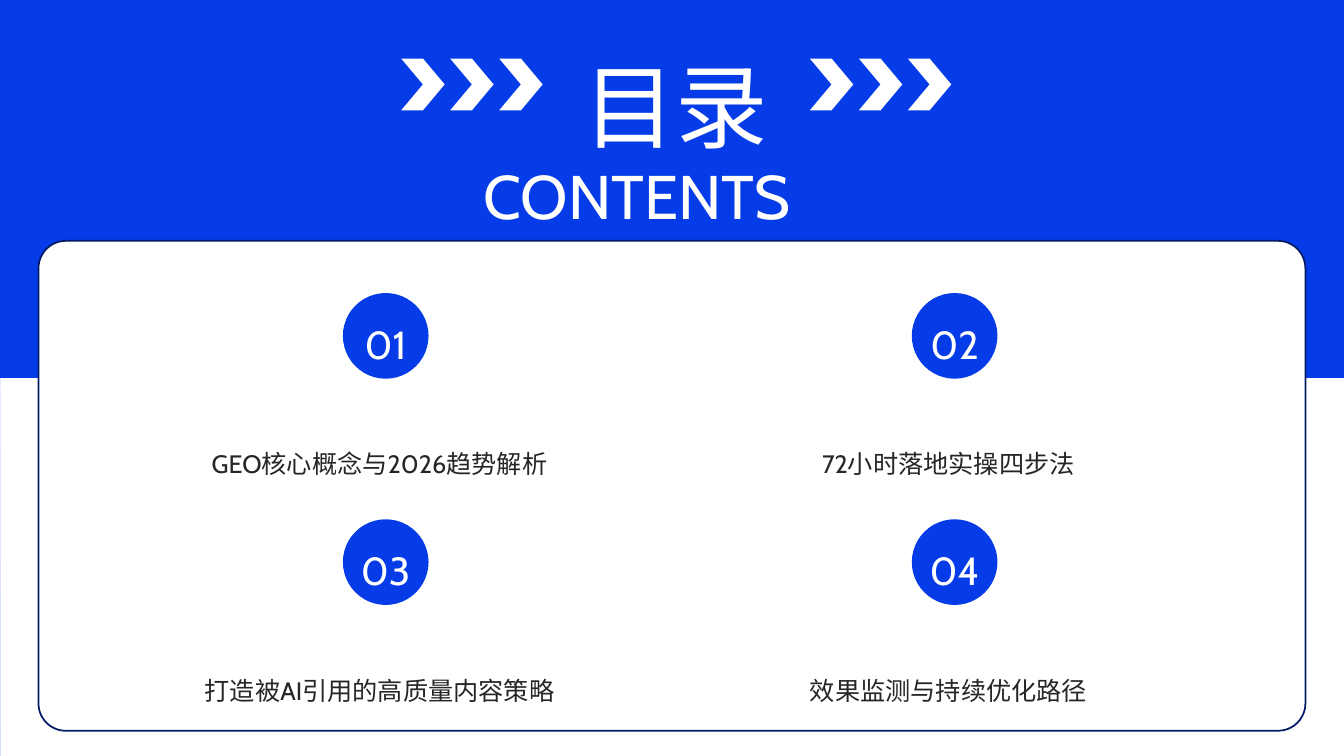
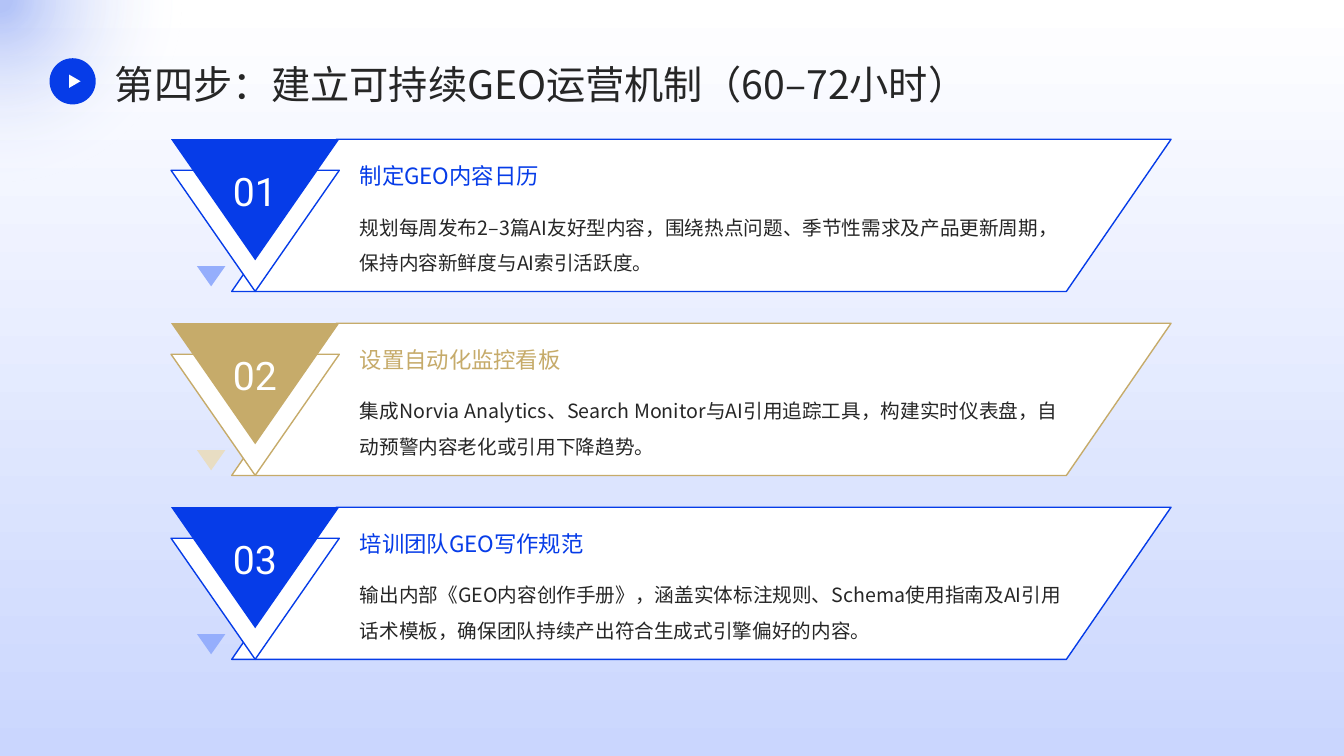
from lxml import etree
from pptx import Presentation
from pptx.dml.color import RGBColor
from pptx.enum.lang import MSO_LANGUAGE_ID
from pptx.enum.shapes import MSO_SHAPE
from pptx.enum.text import MSO_ANCHOR, PP_ALIGN
from pptx.oxml.ns import qn
from pptx.util import Pt

RECT, ROUND_RECT = MSO_SHAPE.RECTANGLE, MSO_SHAPE.ROUNDED_RECTANGLE
OVAL, CHEVRON = MSO_SHAPE.OVAL, MSO_SHAPE.CHEVRON
TRIANGLE, PARALLELOGRAM = MSO_SHAPE.ISOSCELES_TRIANGLE, MSO_SHAPE.PARALLELOGRAM
LEFT, CENTER = PP_ALIGN.LEFT, PP_ALIGN.CENTER
TOP, MIDDLE = MSO_ANCHOR.TOP, MSO_ANCHOR.MIDDLE
CHINESE = MSO_LANGUAGE_ID.SIMPLIFIED_CHINESE

BLUE = RGBColor(0x06, 0x3C, 0xE8)
NAVY = RGBColor(0x03, 0x1A, 0x66)
PALE_BLUE = RGBColor(0x95, 0xAE, 0xFC)
MIST = RGBColor(0xCA, 0xD6, 0xFE)
GOLD = RGBColor(0xC6, 0xAB, 0x6A)
PALE_GOLD = RGBColor(0xE8, 0xDD, 0xC3)
INK = RGBColor(0x26, 0x26, 0x26)
WHITE = RGBColor(0xFF, 0xFF, 0xFF)

CABIN, ROBOTO, NOTO = "Cabin", "Roboto", "Noto Sans CJK SC"
WIDTH, HEIGHT = 960, 540

CHAPTERS = [
    "GEO核心概念与2026趋势解析",
    "72小时落地实操四步法",
    "打造被AI引用的高质量内容策略",
    "效果监测与持续优化路径",
]
MEASURES = [
    ("制定GEO内容日历",
     "规划每周发布2–3篇AI友好型内容，围绕热点问题、季节性需求及产品更新周期，保持内容新鲜度与AI索引活跃度。",
     BLUE, PALE_BLUE),
    ("设置自动化监控看板",
     "集成Norvia Analytics、Search Monitor与AI引用追踪工具，构建实时仪表盘，自动预警内容老化或引用下降趋势。",
     GOLD, PALE_GOLD),
    ("培训团队GEO写作规范",
     "输出内部《GEO内容创作手册》，涵盖实体标注规则、Schema使用指南及AI引用话术模板，确保团队持续产出符合生成式引擎偏好的内容。",
     BLUE, PALE_BLUE),
]


def add_shape(shapes, kind, box, fill=None, line=None, line_width=1, adjust=None, flip=None):
    """Draw a preset shape in a box of points."""
    shape = shapes.add_shape(kind, *map(Pt, box))
    shape.shadow.inherit = False
    if fill is not None:
        shape.fill.solid()
        shape.fill.fore_color.rgb = fill
    if line is None:
        shape.line.fill.background()
    else:
        shape.line.color.rgb = line
        shape.line.width = Pt(line_width)
    if adjust is not None:
        shape.adjustments[0] = adjust
    if flip:
        shape._element.spPr.find(qn("a:xfrm")).set(flip, "1")
    return shape


def add_text(shapes, text, box, size=18, font=CABIN, color=INK, align=LEFT,
             anchor=TOP, spacing=1.3, inset=(0, 0), wrap=True):
    """Place one paragraph of text in a box of points."""
    frame = shapes.add_textbox(*map(Pt, box)).text_frame
    frame.word_wrap = wrap
    frame.vertical_anchor = anchor
    frame.margin_left = frame.margin_right = Pt(inset[0])
    frame.margin_top = frame.margin_bottom = Pt(inset[1])
    paragraph = frame.paragraphs[0]
    paragraph.alignment = align
    paragraph.line_spacing = spacing
    run = paragraph.add_run()
    run.text = text
    run.font.size = Pt(size)
    run.font.color.rgb = color
    run.font.name = font
    run.font.language_id = CHINESE
    etree.SubElement(run.font._element, qn("a:ea")).set("typeface", NOTO)


def set_gradient(shape, stops):
    """Fill a shape with a two-stop gradient running downwards."""
    shape.fill.gradient()
    shape.fill.gradient_angle = 270
    for stop, (position, color) in zip(shape.fill.gradient_stops, stops):
        stop.position = position
        stop.color.rgb = color


def make_radial(shape, opacities):
    """Turn a gradient fill into a circular one with stop opacities in percent."""
    gradient = shape._element.spPr.find(qn("a:gradFill"))
    for color, opacity in zip(gradient.iter(qn("a:srgbClr")), opacities):
        etree.SubElement(color, qn("a:alpha")).set("val", str(opacity * 1000))
    gradient.remove(gradient.find(qn("a:lin")))
    circle = etree.SubElement(gradient, qn("a:path"))
    circle.set("path", "circle")
    center = etree.SubElement(circle, qn("a:fillToRect"))
    for side in "ltrb":
        center.set(side, "50000")


def add_page(deck):
    """Add a blank slide with the shared gradient backdrop."""
    shapes = deck.slides.add_slide(deck.slide_layouts[6]).shapes
    backdrop = add_shape(shapes, RECT, (0, 0, WIDTH, HEIGHT))
    set_gradient(backdrop, [(0, WHITE), (1, MIST)])
    return shapes


def add_chevrons(shapes, left, top):
    """Draw a group of three chevrons from its top left corner."""
    group = shapes.add_group_shape()
    for index in range(3):
        add_shape(group.shapes, CHEVRON, (left + index * 35, top, 31, 37), WHITE)


def add_chapter(shapes, left, top, number, title):
    """Draw a numbered disc with the chapter title under it."""
    add_shape(shapes, OVAL, (left + 153.5, top, 61.2, 61.2), BLUE)
    add_text(shapes, number, (left + 156.7, top + 9.4, 54.7, 44), size=28,
             color=WHITE, align=CENTER, anchor=MIDDLE)
    add_text(shapes, title, (left, top + 95, 359.3, 47.5),
             align=CENTER, anchor=MIDDLE)


def add_contents_slide(deck):
    """Build the table of contents."""
    shapes = add_page(deck)
    add_shape(shapes, RECT, (0.6, 0, WIDTH - 0.6, HEIGHT), WHITE)
    add_shape(shapes, RECT, (0, 0, WIDTH, HEIGHT / 2), BLUE)
    add_text(shapes, "目录", (409.7, 7.9, 147.6, 104.4), size=66, color=WHITE,
             inset=(7.2, 3.6), wrap=False)
    add_shape(shapes, ROUND_RECT, (27.5, 172, 905, 350), WHITE, NAVY, 1.25, 0.056)
    add_text(shapes, "CONTENTS", (338.4, 93.6, 300.2, 72), size=44, color=WHITE,
             inset=(7.2, 3.6))
    for left in (286.6, 578.5):
        add_chevrons(shapes, left, 41.8)
    for index, title in enumerate(CHAPTERS):
        row, column = divmod(index, 2)
        add_chapter(shapes, 91.4 + column * 406.4, 209.3 + row * 161.6,
                    f"{index + 1:02}", title)


def add_title(shapes, title):
    """Draw the corner glow, the play button and the slide title."""
    glow = add_shape(shapes, OVAL, (-129.6, -129.6, 259.2, 259.2), flip="flipH")
    set_gradient(glow, [(0.04, BLUE), (0.72, WHITE)])
    make_radial(glow, (30, 0))
    add_text(shapes, title, (82.1, 41, 824.4, 33.8), size=28, font=NOTO,
             anchor=MIDDLE, spacing=1.1)
    add_shape(shapes, OVAL, (35.4, 41.6, 33, 33), BLUE)
    add_shape(shapes, TRIANGLE, (48.8, 54, 9.4, 8.1), WHITE).rotation = 90


def add_measure(shapes, left, top, number, heading, detail, accent, tint):
    """Draw a slanted card with its triangular number badge."""
    add_shape(shapes, PARALLELOGRAM, (left + 43.3, top, 671, 108.7),
              WHITE, accent, adjust=0.688)
    add_shape(shapes, TRIANGLE, (left, top + 22.2, 120.2, 86.5), WHITE, accent, flip="flipV")
    add_shape(shapes, TRIANGLE, (left, top, 120.2, 86.5), accent, flip="flipV")
    add_text(shapes, number, (left + 32.5, top + 9.8, 54.7, 41.8), size=28,
             font=ROBOTO, color=WHITE, align=CENTER)
    add_text(shapes, detail, (left + 134.8, top + 46, 510.5, 51.1), size=14,
             font=NOTO, spacing=1.5)
    add_shape(shapes, TRIANGLE, (left + 18.5, top + 90.7, 20.2, 14.4), tint, flip="flipV")
    add_text(shapes, heading, (left + 134.8, top + 10.8, 510.5, 33.8), size=16,
             font=NOTO, color=accent)


def add_measures_slide(deck):
    """Build the slide with the three operating measures."""
    shapes = add_page(deck)
    for index, measure in enumerate(MEASURES):
        add_measure(shapes, 122.2, 99.5 + index * 131.4, f"{index + 1:02}", *measure)
    add_title(shapes, "第四步：建立可持续GEO运营机制（60–72小时）")


def main():
    """Build and save the deck."""
    deck = Presentation()
    deck.slide_width, deck.slide_height = Pt(WIDTH), Pt(HEIGHT)
    add_contents_slide(deck)
    add_measures_slide(deck)
    deck.save("out.pptx")


if __name__ == "__main__":
    main()
